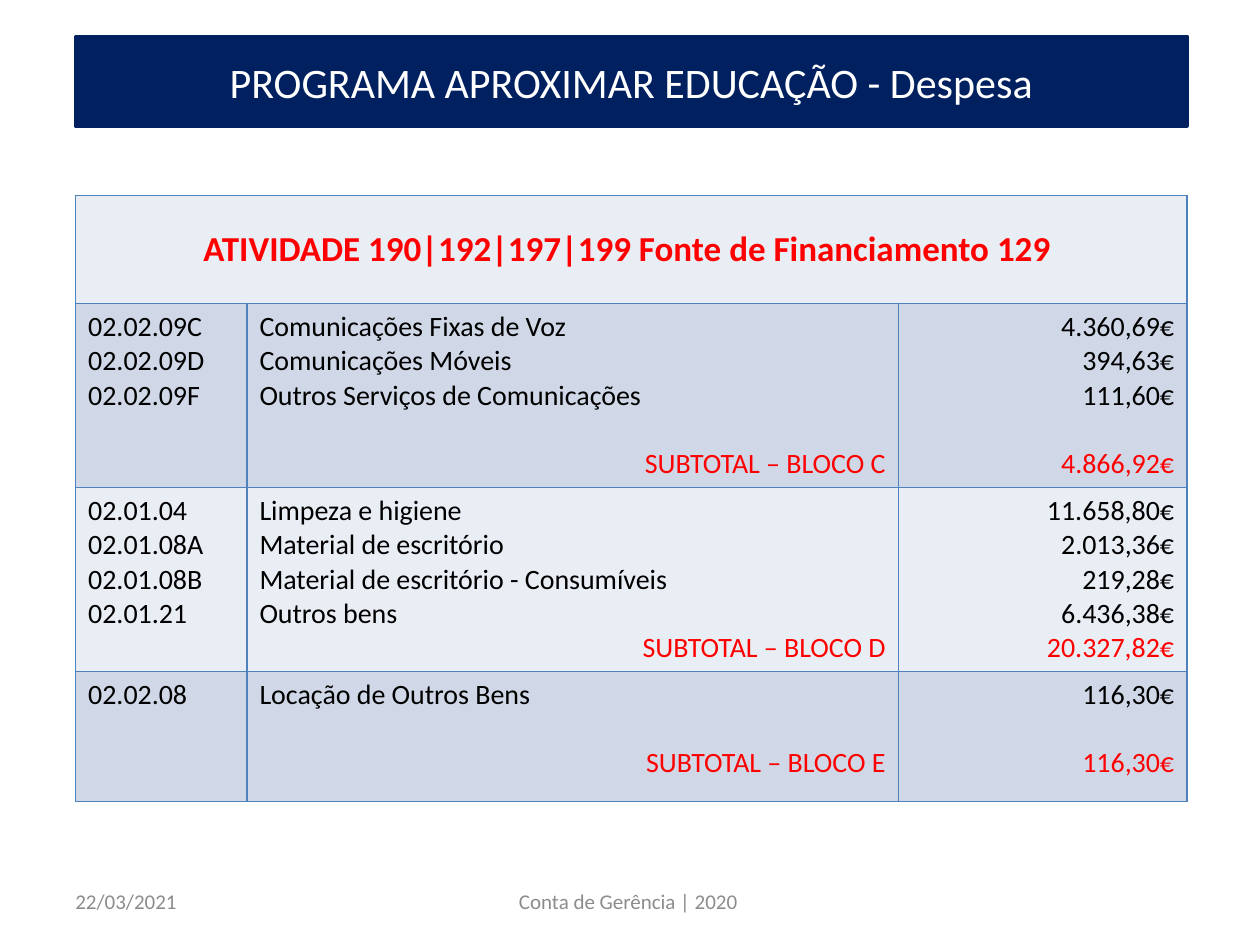
from dataclasses import dataclass

from lxml.etree import SubElement
from pptx import Presentation
from pptx.dml.color import RGBColor as RGB
from pptx.enum.text import MSO_ANCHOR as Anchor, MSO_AUTO_SIZE as AutoSize, PP_ALIGN as Align
from pptx.oxml.ns import qn
from pptx.util import Inches, Pt


@dataclass(frozen=True)
class Theme:
    font: str = "Calibri"
    navy: str = "002060"
    white: str = "FFFFFF"
    black: str = "000000"
    red: str = "FF0000"
    grey: str = "8C8C8C"
    border: str = "4F81BD"
    bands: tuple = ("E9EDF4", "D0D8E8")
    title: int = 24
    heading: int = 20
    body: int = 16
    footer: int = 12
    blank_line: float = 19.5


THEME = Theme()

HEADING = "ATIVIDADE 190|192|197|199 Fonte de Financiamento 129 "
# Each block: lines of (code, description, amount), subtotal, gap above subtotal
BLOCKS = [
    ([("02.02.09C", "Comunicações Fixas de Voz", "4.360,69€"),
      ("02.02.09D", "Comunicações Móveis", "394,63€"),
      ("02.02.09F", "Outros Serviços de Comunicações", "111,60€")],
     ("SUBTOTAL – BLOCO C", "4.866,92€"), True),
    ([("02.01.04", "Limpeza e higiene", "11.658,80€"),
      ("02.01.08A", "Material de escritório", "2.013,36€"),
      ("02.01.08B", "Material de escritório - Consumíveis", "219,28€"),
      ("02.01.21", "Outros bens", "6.436,38€")],
     ("SUBTOTAL – BLOCO D", "20.327,82€"), False),
    ([("02.02.08", "Locação de Outros Bens", "116,30€")],
     ("SUBTOTAL – BLOCO E", "116,30€"), True),
]
COL_WIDTHS = (1.36, 5.17, 2.29)
ROW_HEIGHTS = (0.86, 1.46, 1.46, 1.03)


def write(p, text, size, color, align=Align.LEFT, bold=False):
    p.text = text
    p.alignment = align
    font = p.runs[0].font
    font.name, font.size, font.bold = THEME.font, Pt(size), bold
    font.color.rgb = RGB.from_string(color)


def set_fill(fill, color):
    fill.solid()
    fill.fore_color.rgb = RGB.from_string(color)


def add_title(slide, text, left, top, width, height):
    """Turn the title placeholder into a rounded banner."""
    sp = slide.shapes.title
    sp.left, sp.top, sp.width, sp.height = left, top, width, height
    geom = SubElement(sp.element.spPr, qn("a:prstGeom"), prst="roundRect")
    SubElement(geom, qn("a:avLst"))
    set_fill(sp.fill, THEME.navy)
    set_fill(sp.line.fill, THEME.navy)
    sp.line.width = Pt(2)
    tf = sp.text_frame
    tf.auto_size, tf.vertical_anchor = AutoSize.NONE, Anchor.MIDDLE
    write(tf.paragraphs[0], text, THEME.title, THEME.white, Align.CENTER)


def style_cell(cell, color):
    tc_pr = cell._tc.get_or_add_tcPr()
    for side in ("a:lnL", "a:lnR", "a:lnT", "a:lnB"):
        ln = SubElement(tc_pr, qn(side), w=str(Pt(1)))
        SubElement(SubElement(ln, qn("a:solidFill")), qn("a:srgbClr"), val=THEME.border)
    set_fill(cell.fill, color)


def fill_cell(cell, lines, align, subtotal=None, gap=False):
    """Write one line per paragraph, then a red subtotal on the right."""
    tf = cell.text_frame
    tf.text = "\n".join(lines)
    for p, line in zip(tf.paragraphs, lines):
        write(p, line, THEME.body, THEME.black, align)
    if subtotal:
        p = tf.add_paragraph()
        write(p, subtotal, THEME.body, THEME.red, Align.RIGHT)
        p.space_before = Pt(THEME.blank_line if gap else 0)


def add_expense_table(slide, left, top):
    width, height = Inches(sum(COL_WIDTHS)), Inches(sum(ROW_HEIGHTS))
    table = slide.shapes.add_table(len(ROW_HEIGHTS), len(COL_WIDTHS),
                                   left, top, width, height).table
    for col, w in zip(table.columns, COL_WIDTHS):
        col.width = Inches(w)
    for i, (row, h) in enumerate(zip(table.rows, ROW_HEIGHTS)):
        row.height = Inches(h)
        for cell in row.cells:
            style_cell(cell, THEME.bands[i % 2])

    head = table.cell(0, 0)
    head.merge(table.cell(0, len(COL_WIDTHS) - 1))
    head.vertical_anchor = Anchor.MIDDLE
    write(head.text_frame.paragraphs[0], HEADING, THEME.heading, THEME.red,
          Align.CENTER, bold=True)

    for i, (lines, (label, total), gap) in enumerate(BLOCKS, start=1):
        codes, names, amounts = zip(*lines)
        fill_cell(table.cell(i, 0), codes, Align.LEFT)
        fill_cell(table.cell(i, 1), names, Align.LEFT, label, gap)
        fill_cell(table.cell(i, 2), amounts, Align.RIGHT, total, gap)


def add_footer_text(slide, text, align, left, top, width, height):
    tf = slide.shapes.add_textbox(left, top, width, height).text_frame
    tf.word_wrap, tf.vertical_anchor = True, Anchor.MIDDLE
    write(tf.paragraphs[0], text, THEME.footer, THEME.grey, align)


def add_footer(slide, left, top, height):
    add_footer_text(slide, "22/03/2021", Align.LEFT, left, top, Inches(2.33), height)
    add_footer_text(slide, "Conta de Gerência | 2020 ", Align.CENTER,
                    left + Inches(2.92), top, Inches(3.17), height)


def main():
    prs = Presentation()
    prs.slide_width, prs.slide_height = Inches(10), Inches(7.5)
    slide = prs.slides.add_slide(prs.slide_layouts.get_by_name("Title Only"))
    add_footer(slide, Inches(0.5), Inches(6.95), Inches(0.4))
    add_expense_table(slide, Inches(0.6), Inches(1.55))
    add_title(slide, "PROGRAMA APROXIMAR EDUCAÇÃO - Despesa",
              Inches(0.6), Inches(0.29), Inches(8.82), Inches(0.71))
    prs.save("out.pptx")


if __name__ == "__main__":
    main()
